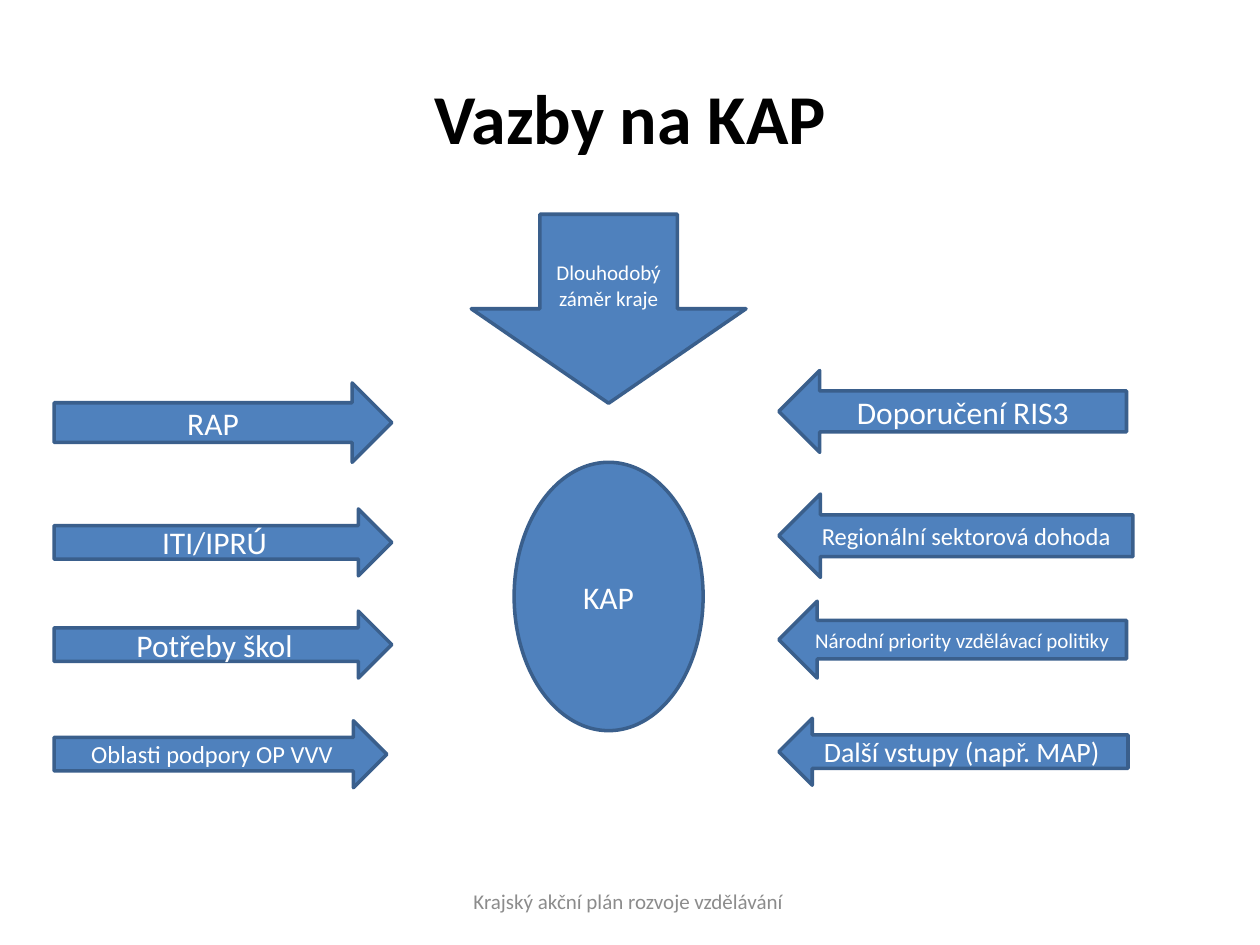
from pptx import Presentation, util as u
from pptx.dml.color import RGBColor
from pptx.enum import shapes, text

BLUE = RGBColor(0x4F, 0x81, 0xBD)
DARK_BLUE = RGBColor(0x3A, 0x5F, 0x8C)
WHITE = RGBColor(0xFF, 0xFF, 0xFF)
BLACK = RGBColor(0, 0, 0)
GREY = RGBColor(0x8C, 0x8C, 0x8C)
FONT = "Calibri"

# Content: label, text size, top, width, height (cm)
TITLE = "Vazby na KAP"
FOOTER = "Krajský akční plán rozvoje vzdělávání"
LEFT_INPUTS = [
    ("RAP", 18, 7.72, 6.81, 1.6),
    ("ITI/IPRÚ", 18, 10.26, 6.81, 1.35),
    ("Potřeby škol", 18, 12.32, 6.81, 1.35),
    ("Oblasti podpory OP VVV", 14, 14.53, 6.71, 1.35),
]
RIGHT_INPUTS = [
    ("Doporučení RIS3", 18, 7.47, 7.01, 1.65),
    ("Regionální sektorová dohoda", 14, 9.96, 7.14, 1.68),
    ("Národní priority vzdělávací politiky", 12, 12.12, 7.01, 1.55),
    ("Další vstupy (např. MAP)", 16, 14.48, 7.04, 1.35),
]
PLAN = ("KAP", 18, 9.32, 3.81, 5.41)
REGION_GOAL = ("Dlouhodobý záměr kraje", 12, 4.32, 5.54, 3.81)

LEFT_X, RIGHT_X, CENTRE_X = 1.09, 15.7, 12.27


def write(box, label, size, color, bold=False):
    frame = box.text_frame
    frame.word_wrap = True
    frame.vertical_anchor = text.MSO_ANCHOR.MIDDLE
    paragraph = frame.paragraphs[0]
    paragraph.alignment = text.PP_ALIGN.CENTER
    run = paragraph.add_run()
    run.text = label
    run.font.name = FONT
    run.font.size = u.Pt(size)
    run.font.bold = bold
    run.font.color.rgb = color


def add_caption(slide, place, label, size, color, bold=False):
    caption = slide.shapes.add_textbox(*map(u.Cm, place))
    write(caption, label, size, color, bold)


def add_block(slide, kind, x, block):
    label, size, top, width, height = block
    shape = slide.shapes.add_shape(kind, *map(u.Cm, (x, top, width, height)))
    shape.shadow.inherit = False
    shape.fill.solid()
    shape.fill.fore_color.rgb = BLUE
    shape.line.color.rgb = DARK_BLUE
    shape.line.width = u.Pt(2)
    write(shape, label, size, WHITE)


def main():
    prs = Presentation()
    prs.slide_width, prs.slide_height = u.Cm(25.4), u.Cm(19.05)
    slide = prs.slides.add_slide(prs.slide_layouts[6])
    kinds = shapes.MSO_SHAPE

    add_caption(slide, (1.27, 0.76, 22.86, 3.18), TITLE, 40, BLACK, bold=True)

    # Plan and the regional goal above it, on one centre line
    for kind, block in ((kinds.OVAL, PLAN), (kinds.DOWN_ARROW, REGION_GOAL)):
        add_block(slide, kind, CENTRE_X - block[3] / 2, block)

    # Inputs from both sides
    for kind, x, inputs in ((kinds.RIGHT_ARROW, LEFT_X, LEFT_INPUTS),
                            (kinds.LEFT_ARROW, RIGHT_X, RIGHT_INPUTS)):
        for block in inputs:
            add_block(slide, kind, x, block)

    add_caption(slide, (8.64, 17.65, 8.05, 1.02), FOOTER, 12, GREY)
    prs.save("out.pptx")


if __name__ == "__main__":
    main()
